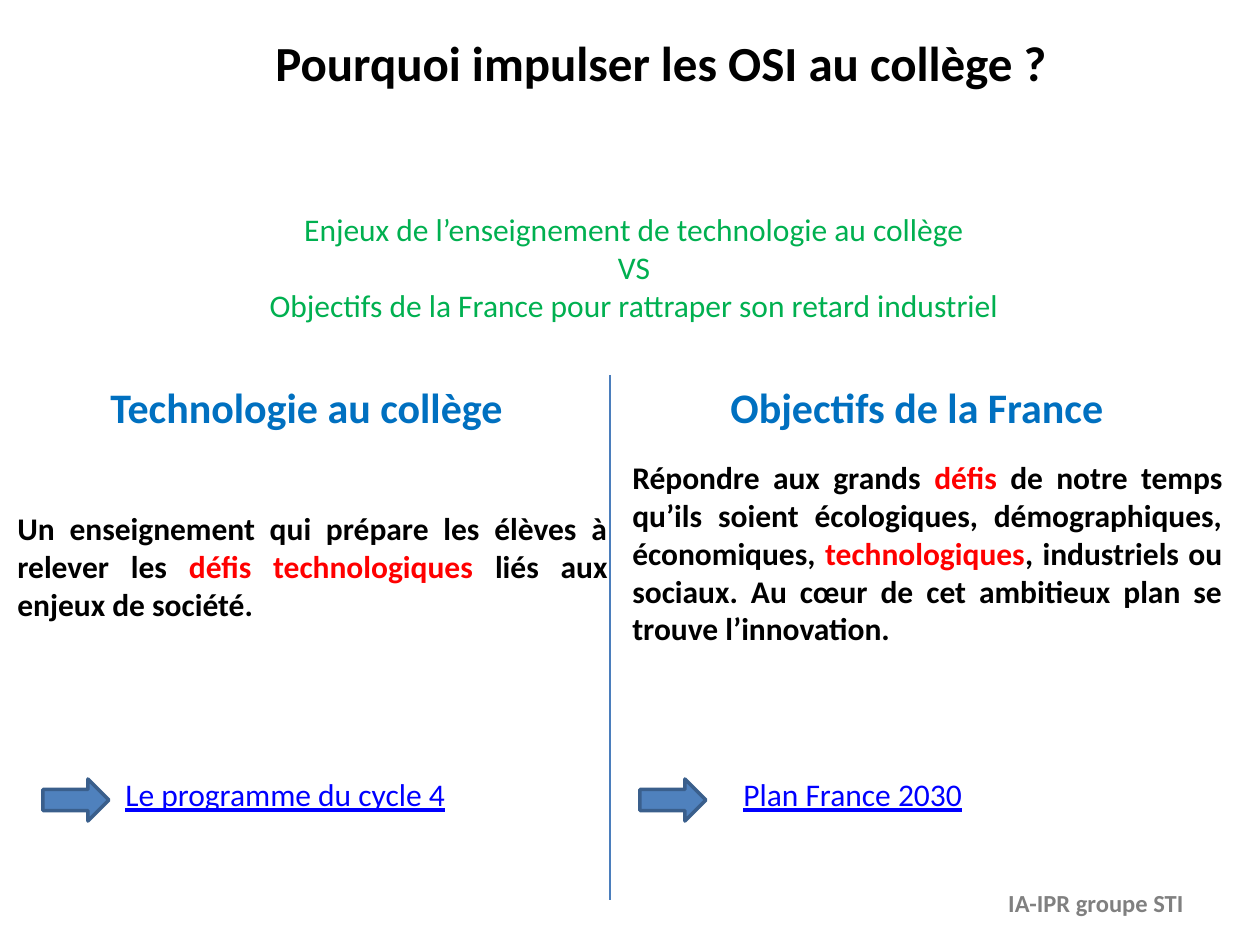
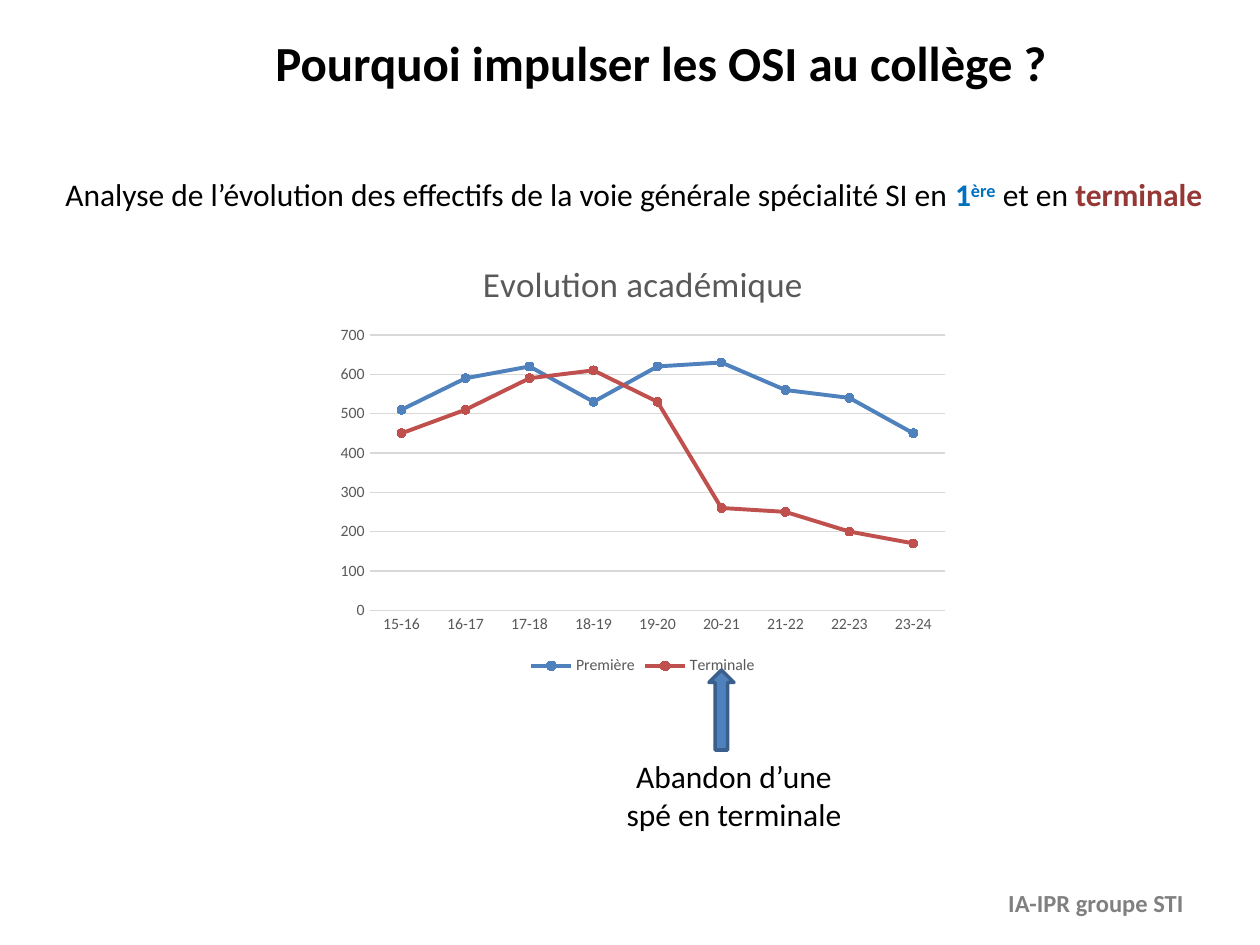
from lxml import etree
from pptx import Presentation
from pptx.chart.data import CategoryChartData
from pptx.dml.color import RGBColor
from pptx.enum.chart import (
    XL_CHART_TYPE as ChartType,
    XL_LEGEND_POSITION as LegendPosition,
    XL_MARKER_STYLE as MarkerStyle,
    XL_TICK_MARK as TickMark,
)
from pptx.enum.shapes import MSO_CONNECTOR as Connector, MSO_SHAPE as Preset
from pptx.enum.text import MSO_AUTO_SIZE as AutoSize, PP_ALIGN as Align
from pptx.oxml.ns import qn
from pptx.util import Emu, Pt

BLACK = RGBColor(0x00, 0x00, 0x00)
GRAY = RGBColor(0x80, 0x80, 0x80)
DARK_GRAY = RGBColor(0x59, 0x59, 0x59)
LIGHT_GRAY = RGBColor(0xD9, 0xD9, 0xD9)
GREEN = RGBColor(0x00, 0xB0, 0x50)
RED = RGBColor(0xFF, 0x00, 0x00)
BLUE = RGBColor(0x00, 0x70, 0xC0)
LINK_BLUE = RGBColor(0x00, 0x00, 0xFF)
DARK_RED = RGBColor(0x95, 0x37, 0x35)
ACCENT_BLUE = RGBColor(0x4F, 0x81, 0xBD)
ACCENT_RED = RGBColor(0xC0, 0x50, 0x4D)
ARROW_EDGE = RGBColor(0x3A, 0x5F, 0x8C)
DIVIDER_BLUE = RGBColor(0x4B, 0x7E, 0xBC)

PX = 914400 / 126
FONT = "Calibri"
TITLE = "Pourquoi impulser les OSI au collège ?"
FOOTER = "IA-IPR groupe STI"


def px(*lengths):
    return [Emu(round(length * PX)) for length in lengths]


class Deck:
    def __init__(self):
        self.presentation = Presentation()
        self.presentation.slide_width, self.presentation.slide_height = px(1260, 945)
        self.slide = None

    def new_slide(self):
        self.slide = self.presentation.slides.add_slide(self.presentation.slide_layouts[6])
        self.text((809, 882, 387, 43), [[FOOTER]], Align.RIGHT, size=14, color=GRAY, bold=True)
        self.text((263, 26, 873, 72), [[TITLE]], size=28, bold=True)

    def set_font(self, font, size=18, color=BLACK, **format_values):
        font.color.rgb = color
        for name, value in {"name": FONT, "size": Pt(size), **format_values}.items():
            setattr(font, name, value)

    def text(self, box, paragraphs, align=Align.LEFT, **style):
        frame = self.slide.shapes.add_textbox(*px(*box)).text_frame
        frame.word_wrap = True
        frame.auto_size = AutoSize.SHAPE_TO_FIT_TEXT
        for index, pieces in enumerate(paragraphs):
            paragraph = frame.add_paragraph() if index else frame.paragraphs[0]
            paragraph.alignment = align
            for piece in pieces:
                words, changes = (piece, {}) if isinstance(piece, str) else piece
                changes = dict(changes)
                raised = changes.pop("raised", False)
                run = paragraph.add_run()
                run.text = words
                self.set_font(run.font, **{**style, **changes})
                if raised:
                    run._r.get_or_add_rPr().set("baseline", "30000")

    def arrow(self, preset, box):
        shape = self.slide.shapes.add_shape(preset, *px(*box))
        shape.shadow.inherit = False
        shape.fill.solid()
        shape.fill.fore_color.rgb = ACCENT_BLUE
        self.set_line(shape.line, ARROW_EDGE, 2)

    def set_line(self, line, color, width):
        line.color.rgb = color
        line.width = Pt(width)

    def divider(self, x, top, bottom):
        connector = self.slide.shapes.add_connector(Connector.STRAIGHT, *px(x, top, x, bottom))
        self.set_line(connector.line, DIVIDER_BLUE, 0.75)
        etree.SubElement(connector._element.spPr, qn("a:effectLst"))

    def line_chart(self, box, title, categories, series_values, colors):
        data = CategoryChartData()
        data.categories = categories
        for name, values in series_values.items():
            data.add_series(name, values)
        chart = self.slide.shapes.add_chart(ChartType.LINE_MARKERS, *px(*box), data).chart
        self.set_font(chart.font, 10)
        chart.has_title = True
        chart.chart_title.include_in_layout = False
        paragraph = chart.chart_title.text_frame.paragraphs[0]
        run = paragraph.add_run()
        run.text = title
        self.set_font(run.font, 20, DARK_GRAY, bold=False)
        chart.has_legend = True
        chart.legend.position = LegendPosition.BOTTOM
        chart.legend.include_in_layout = False
        self.set_font(chart.legend.font, 9, DARK_GRAY)
        for axis in (chart.category_axis, chart.value_axis):
            axis.major_tick_mark = axis.minor_tick_mark = TickMark.NONE
            self.set_font(axis.tick_labels.font, 9, DARK_GRAY)
        self.set_line(chart.category_axis.format.line, LIGHT_GRAY, 0.75)
        value_axis = chart.value_axis
        limits = {"minimum_scale": 0, "maximum_scale": 700, "major_unit": 100}
        for name, value in limits.items():
            setattr(value_axis, name, value)
        value_axis.format.line.fill.background()
        self.set_line(value_axis.major_gridlines.format.line, LIGHT_GRAY, 0.75)
        plot = chart.plots[0]
        plot.vary_by_categories = False
        for series, color in zip(plot.series, colors):
            series.smooth = False
            self.set_line(series.format.line, color, 2.25)
            marker = series.marker
            marker.style = MarkerStyle.CIRCLE
            marker.size = 5
            marker.format.fill.solid()
            marker.format.fill.fore_color.rgb = color
            self.set_line(marker.format.line, color, 0.75)


def build_stakes(deck):
    deck.new_slide()
    stakes = [
        ["Enjeux de l’enseignement de technologie au collège"],
        ["VS"],
        ["Objectifs de la France pour rattraper son retard industriel"],
    ]
    deck.text((43, 204, 1182, 127), stakes, Align.CENTER, color=GREEN)
    deck.divider(610, 375, 900)

    red = {"color": RED}
    school = [
        "Un enseignement qui prépare les élèves à relever les ",
        ("défis technologiques ", red),
        "liés aux enjeux de société.",
    ]
    country = [
        "Répondre aux grands ",
        ("défis", red),
        " de notre temps qu’ils soient écologiques, démographiques, économiques, ",
        ("technologiques", red),
        ", industriels ou sociaux. Au cœur de cet ambitieux plan se trouve l’innovation.",
    ]
    columns = [
        ("Technologie au collège", 98, school, (5, 503, 615, 127), 43, "Le programme du cycle 4", 113),
        ("Objectifs de la France", 718, country, (620, 452, 615, 242), 640, "Plan France 2030", 731),
    ]
    for heading, heading_x, body, body_box, arrow_x, link, link_x in columns:
        deck.text((heading_x, 375, 466, 63), [[heading]], size=24, color=BLUE, bold=True)
        deck.text(body_box, [body], Align.JUSTIFY, bold=True)
        deck.arrow(Preset.RIGHT_ARROW, (arrow_x, 779, 66, 42))
        deck.text((link_x, 769, 442, 50), [[link]], color=LINK_BLUE, underline=True)


def build_enrolment(deck):
    deck.new_slide()
    first_year = {"color": BLUE, "bold": True}
    analysis = [
        "Analyse de l’évolution des effectifs de la voie générale spécialité SI en ",
        ("1", first_year),
        ("ère", {**first_year, "raised": True}),
        " et en ",
        ("terminale", {"color": DARK_RED, "bold": True}),
    ]
    deck.text((53, 169, 1182, 50), [analysis])
    enrolment = {
        "Première": (510, 590, 620, 530, 620, 630, 560, 540, 450),
        "Terminale": (450, 510, 590, 610, 530, 260, 250, 200, 170),
    }
    school_years = [f"{year}-{year + 1}" for year in range(15, 24)]
    deck.line_chart((328, 237, 630, 443), "Evolution académique", school_years,
                    enrolment, (ACCENT_BLUE, ACCENT_RED))
    deck.arrow(Preset.UP_ARROW, (709, 670, 25, 80))
    deck.text((610, 751, 248, 89), [["Abandon d’une spé en terminale"]], Align.CENTER)


def main():
    deck = Deck()
    build_stakes(deck)
    build_enrolment(deck)
    deck.presentation.save("out.pptx")


if __name__ == "__main__":
    main()
